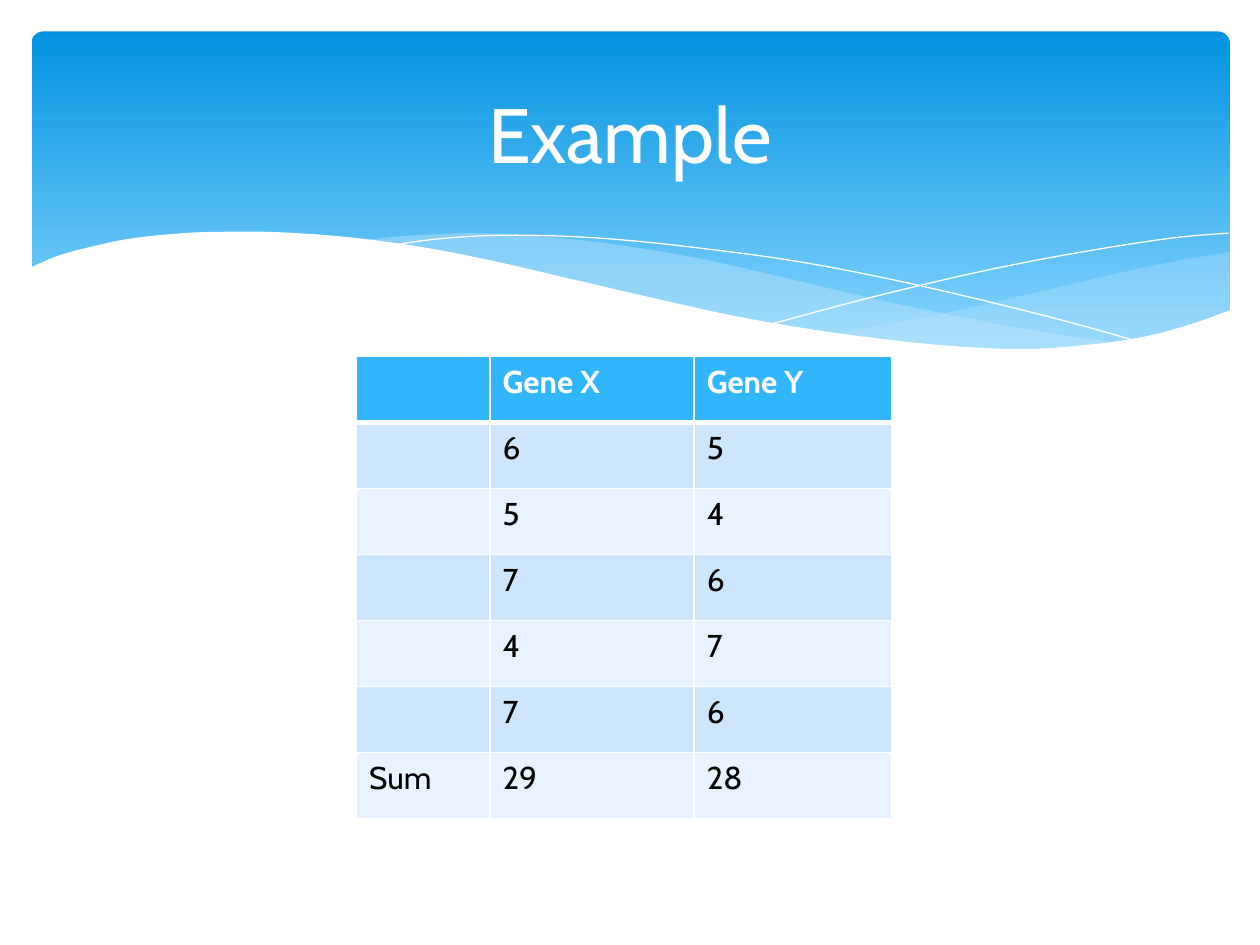
from lxml import etree
from pptx import Presentation
from pptx.dml.color import RGBColor
from pptx.enum.shapes import MSO_SHAPE
from pptx.enum.text import MSO_ANCHOR, PP_ALIGN
from pptx.oxml.ns import qn
from pptx.util import Inches, Pt

ROUNDED = MSO_SHAPE.ROUNDED_RECTANGLE
MIDDLE, CENTER = MSO_ANCHOR.MIDDLE, PP_ALIGN.CENTER

FONT = "Cabin"
WHITE, BLACK = "FFFFFF", "000000"
SKY_TOP, SKY_BOTTOM, MIST = "0293E0", "83D3FE", "C6E7FC"
HEADER, BANDS = "31B6FD", ("CEE5FE", "E8F3FF")

TITLE = "Example"
ROWS = [
    ("", "Gene X", "Gene Y"),
    ("", "6", "5"),
    ("", "5", "4"),
    ("", "7", "6"),
    ("", "4", "7"),
    ("", "7", "6"),
    ("Sum", "29", "28"),
]
COLUMN_WIDTHS = (1.06, 1.62, 1.57)
TABLE_LEFT, TABLE_TOP, TABLE_HEIGHT = 2.83, 2.83, 3.67

# Each wave is a list of curves; a curve runs smoothly through its points.
RIGHT_MIST = [
    [(9.76, 2), (9.35, 2.07), (8.91, 2.16), (8.32, 2.3), (7.79, 2.42),
     (7.29, 2.53), (6.61, 2.65)],
    [(6.61, 2.65), (7.05, 2.71), (7.57, 2.76), (8.03, 2.78), (8.44, 2.77),
     (8.81, 2.73), (9.13, 2.67), (9.42, 2.59), (9.76, 2.47)],
]
LEFT_MIST = [
    [(8.93, 2.73), (8.37, 2.65), (7.75, 2.54), (7.06, 2.4), (6.29, 2.22),
     (5.69, 2.08), (5.14, 1.98), (4.65, 1.91), (4.2, 1.87), (3.8, 1.85),
     (3.44, 1.86), (3.13, 1.88), (2.86, 1.91)],
    [(2.86, 1.91), (3.42, 1.99), (4.04, 2.11), (4.49, 2.22), (5.3, 2.4),
     (6.01, 2.55), (6.65, 2.66), (7.22, 2.74), (7.73, 2.77), (8.18, 2.78),
     (8.57, 2.77), (8.93, 2.73)],
]
FALLING_LINE = [
    [(3.09, 1.95), (3.44, 1.9), (3.87, 1.87), (4.33, 1.87), (4.89, 1.9),
     (5.56, 1.97), (6.36, 2.08), (7.27, 2.26), (8.31, 2.51), (9.07, 2.72)],
]
RISING_LINE = [
    [(6.13, 2.57), (6.72, 2.41), (7.2, 2.29), (7.76, 2.16), (8.36, 2.04),
     (8.95, 1.94), (9.38, 1.88), (9.75, 1.85)],
]
WHITE_WAVE = [
    [(9.77, 2.46), (9.4, 2.59), (8.99, 2.69), (8.5, 2.75), (8.09, 2.77),
     (7.61, 2.75), (7.08, 2.7), (6.48, 2.62), (5.79, 2.5), (5.03, 2.33),
     (4.47, 2.2), (3.91, 2.07), (3.4, 1.97), (2.92, 1.9), (2.5, 1.86),
     (2.11, 1.84), (1.77, 1.84), (1.46, 1.85), (1.06, 1.89), (0.76, 1.95),
     (0.46, 2.03), (0.23, 2.13)],
    [(0.23, 3.29), (9.77, 3.29)],
]


def rgb(color):
    return RGBColor.from_string(color)


def smooth(points, steps=4):
    """Return points along a Catmull-Rom curve through the given points."""
    padded = [points[0], *points, points[-1]]
    curve = [points[0]]
    for a, b, c, d in zip(padded, padded[1:], padded[2:], padded[3:]):
        for step in range(1, steps + 1):
            t = step / steps
            curve.append(tuple(
                q + t * ((r - p) + t * ((2 * p - 5 * q + 4 * r - s)
                                        + t * (3 * q - p - 3 * r + s))) / 2
                for p, q, r, s in zip(a, b, c, d)))
    return curve


def add_wave(page, curves, fill=None, alpha=100):
    """Add a filled wave, or a white hairline when no fill is given."""
    points = [(Inches(x), Inches(y)) for curve in curves for x, y in smooth(curve)]
    builder = page.shapes.build_freeform(*points[0], scale=1.0)
    builder.add_line_segments(points[1:], close=fill is not None)
    wave = builder.convert_to_shape()
    wave.shadow.inherit = False
    if fill is None:
        wave.fill.background()
        wave.line.color.rgb = rgb(WHITE)
        wave.line.width = Pt(0)
        return
    wave.line.fill.background()
    wave.fill.solid()
    wave.fill.fore_color.rgb = rgb(fill)
    if alpha < 100:
        color = wave.fill._xPr.find(qn("a:solidFill"))[0]
        etree.SubElement(color, qn("a:alpha"), val=str(alpha * 1000))


def add_banner(page):
    banner = page.shapes.add_shape(
        ROUNDED, Inches(0.25), Inches(0.25), Inches(9.51), Inches(2.7))
    banner.adjustments[0] = 0.034
    banner.shadow.inherit = False
    banner.line.fill.background()
    banner.fill.gradient()
    banner.fill.gradient_angle = 270
    stops = zip(banner.fill.gradient_stops, (0, 0.9), (SKY_TOP, SKY_BOTTOM))
    for stop, position, color in stops:
        stop.position = position
        stop.color.rgb = rgb(color)


def set_borders(cell, widths):
    """Give a cell white borders; widths are points for each side's tag."""
    properties = cell._tc.get_or_add_tcPr()
    for side, width in widths.items():
        line = etree.SubElement(properties, qn(f"a:{side}"), w=str(Pt(width)))
        solid = etree.SubElement(line, qn("a:solidFill"))
        etree.SubElement(solid, qn("a:srgbClr"), val=WHITE)


def add_gene_table(page):
    table = page.shapes.add_table(
        len(ROWS), len(COLUMN_WIDTHS), Inches(TABLE_LEFT), Inches(TABLE_TOP),
        Inches(sum(COLUMN_WIDTHS)), Inches(TABLE_HEIGHT)).table
    for column, width in zip(table.columns, COLUMN_WIDTHS):
        column.width = Inches(width)
    for i, texts in enumerate(ROWS):
        is_header = i == 0
        for j, text in enumerate(texts):
            cell = table.cell(i, j)
            set_borders(cell, {"lnL": 1, "lnR": 1, "lnT": 3 if i == 1 else 1,
                               "lnB": 3 if is_header else 1})
            cell.fill.solid()
            cell.fill.fore_color.rgb = rgb(HEADER if is_header else BANDS[(i - 1) % 2])
            cell.text = text
            font = cell.text_frame.paragraphs[0].font
            font.name, font.size, font.bold = FONT, Pt(18), is_header
            font.color.rgb = rgb(WHITE if is_header else BLACK)


def place_title(page):
    title = page.shapes.title
    page.shapes._spTree.append(title._element)  # bring in front of the banner
    title.left, title.top = Inches(0.5), Inches(0.37)
    title.width, title.height = Inches(9), Inches(1.37)
    title.text = TITLE
    title.text_frame.vertical_anchor = MIDDLE
    para = title.text_frame.paragraphs[0]
    para.alignment = CENTER
    para.font.name, para.font.size = FONT, Pt(44)
    para.font.color.rgb = rgb(WHITE)


def main():
    deck = Presentation()
    deck.slide_width, deck.slide_height = Inches(10), Inches(7.5)
    page = deck.slides.add_slide(deck.slide_layouts[5])
    add_banner(page)
    add_wave(page, RIGHT_MIST, MIST, 29)
    add_wave(page, LEFT_MIST, MIST, 40)
    add_wave(page, FALLING_LINE)
    add_wave(page, RISING_LINE)
    add_wave(page, WHITE_WAVE, WHITE)
    add_gene_table(page)
    place_title(page)
    deck.save("out.pptx")


if __name__ == "__main__":
    main()
